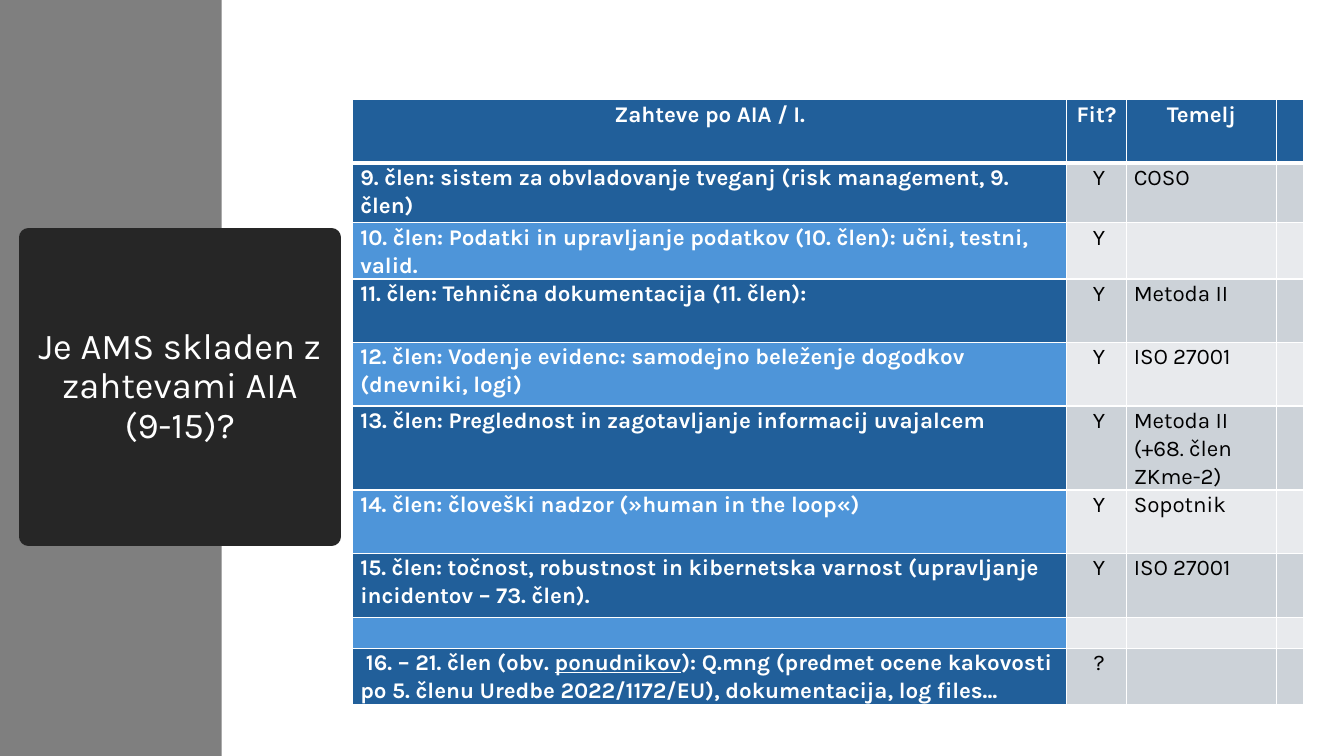
from lxml import etree
from pptx import Presentation
from pptx.dml.color import RGBColor
from pptx.enum.shapes import MSO_SHAPE
from pptx.enum.text import MSO_ANCHOR, MSO_AUTO_SIZE, PP_ALIGN
from pptx.oxml.ns import qn
from pptx.util import Pt

RECTANGLE = MSO_SHAPE.RECTANGLE
CENTER, LEFT = PP_ALIGN.CENTER, PP_ALIGN.LEFT
MIDDLE = MSO_ANCHOR.MIDDLE
NO_AUTOFIT = MSO_AUTO_SIZE.NONE

FONT = "Karla"
TITLE_ONLY = 5
WHITE, BLACK, GREY, CHARCOAL = "FFFFFF", "000000", "7F7F7F", "262626"
ARTICLE_FILLS = ("215F9A", "4E95D9")
ANSWER_FILLS = ("CCD2D8", "E8EAED")

UNDERLINED = "ponudnikov"
HEADINGS = ("Zahteve po AIA / I.", "Fit?", "Temelj", "")
COLUMN_WIDTHS = (510, 42.5, 107.3, 19.4)
HEADER_HEIGHT = 45.4
# Row height, requirement, fit, basis
REQUIREMENTS = (
    (42.5, "9. člen: sistem za obvladovanje tveganj (risk management, 9. člen)", " Y", "COSO"),
    (40, "10. člen: Podatki in upravljanje podatkov (10. člen): učni, testni, valid.", " Y", ""),
    (45.4, "11. člen: Tehnična dokumentacija (11. člen):", " Y", "Metoda II"),
    (45.4, "12. člen: Vodenje evidenc: samodejno beleženje dogodkov (dnevniki, logi)",
     " Y", "ISO 27001"),
    (60, "13. člen: Preglednost in zagotavljanje informacij uvajalcem",
     " Y", "Metoda II (+68. člen ZKme-2)"),
    (45.4, "14. člen: človeški nadzor (»human in the loop«)", " Y", "Sopotnik"),
    (45.4, "15. člen: točnost, robustnost in kibernetska varnost (upravljanje incidentov – 73. člen).",
     " Y", "ISO 27001"),
    (22.3, "", "", ""),
    (40, " 16. – 21. člen (obv. ponudnikov): Q.mng (predmet ocene kakovosti po 5. členu "
     "Uredbe 2022/1172/EU), dokumentacija, log files…", " ?", ""),
)


def paint(color_format, hex_color):
    color_format.rgb = RGBColor.from_string(hex_color)


def fill_with(part, hex_color):
    part.fill.solid()
    paint(part.fill.fore_color, hex_color)


def format_run(run, size, color, bold=False):
    run.font.name = FONT
    run.font.size = Pt(size)
    run.font.bold = bold
    paint(run.font.color, color)


def add_side_band(slide, left, top, width, height):
    band = slide.shapes.add_shape(RECTANGLE, Pt(left), Pt(top), Pt(width), Pt(height))
    band.shadow.inherit = False
    fill_with(band, GREY)
    band.line.fill.background()
    # The band lies behind the title
    band._element.getparent().insert(2, band._element)


def place_title(slide, left, top, width, height):
    title = slide.shapes.title
    title.left, title.top, title.width, title.height = Pt(left), Pt(top), Pt(width), Pt(height)
    fill_with(title, CHARCOAL)
    paint(title.line.color, CHARCOAL)
    title.line.width = Pt(13.75)
    frame = title.text_frame
    frame.text = "Je AMS skladen z zahtevami AIA (9-15)?"
    frame.word_wrap = True
    frame.auto_size = NO_AUTOFIT
    frame.vertical_anchor = MIDDLE
    frame.margin_left = frame.margin_right = Pt(5)
    paragraph = frame.paragraphs[0]
    paragraph.alignment = CENTER
    paragraph.line_spacing = 0.9
    format_run(paragraph.runs[0], 26, WHITE)


def add_borders(cell, bottom_width):
    properties = cell._tc.get_or_add_tcPr()
    widths = {"a:lnL": 1, "a:lnR": 1, "a:lnT": 1, "a:lnB": bottom_width}
    for position, (side, width) in enumerate(widths.items()):
        border = etree.Element(qn(side), w=str(Pt(width)))
        solid = etree.SubElement(border, qn("a:solidFill"))
        etree.SubElement(solid, qn("a:srgbClr"), val=WHITE)
        properties.insert(position, border)


def fill_cell(cell, text, fill, color, bold, alignment, bottom_width=1):
    fill_with(cell, fill)
    add_borders(cell, bottom_width)
    cell.margin_left = cell.margin_right = Pt(5.4)
    cell.margin_top = cell.margin_bottom = Pt(0)
    if not text:
        return
    paragraph = cell.text_frame.paragraphs[0]
    before, underlined, after = text.partition(UNDERLINED)
    paragraph.text = before
    for extra in filter(None, (underlined, after)):
        paragraph.add_run().text = extra
    paragraph.alignment = alignment
    paragraph.line_spacing = 1.07
    paragraph.space_after = Pt(8)
    for run in paragraph.runs:
        format_run(run, 16, color, bold)
        if run.text == UNDERLINED:
            run.font.underline = True


def add_requirements_table(slide, left, top):
    heights = [HEADER_HEIGHT] + [row[0] for row in REQUIREMENTS]
    table = slide.shapes.add_table(
        len(heights), len(COLUMN_WIDTHS), Pt(left), Pt(top),
        Pt(sum(COLUMN_WIDTHS)), Pt(sum(heights))).table
    for column, width in zip(table.columns, COLUMN_WIDTHS):
        column.width = Pt(width)
    for row, height in zip(table.rows, heights):
        row.height = Pt(height)

    # Header
    for index, heading in enumerate(HEADINGS):
        fill_cell(table.cell(0, index), heading, ARTICLE_FILLS[0], WHITE, True, CENTER, 3)

    # Requirements, in alternating bands
    for index, (_, article, fit, basis) in enumerate(REQUIREMENTS):
        article_fill, answer_fill = ARTICLE_FILLS[index % 2], ANSWER_FILLS[index % 2]
        cells = table.rows[index + 1].cells
        fill_cell(cells[0], article, article_fill, WHITE, True, LEFT)
        fill_cell(cells[1], fit, answer_fill, BLACK, False, CENTER)
        fill_cell(cells[2], basis, answer_fill, BLACK, False, LEFT)
        fill_cell(cells[3], "", answer_fill, BLACK, False, LEFT)


def main():
    presentation = Presentation()
    presentation.slide_width, presentation.slide_height = Pt(960), Pt(540)
    slide = presentation.slides.add_slide(presentation.slide_layouts[TITLE_ONLY])
    add_side_band(slide, 0, 0, 158.4, 540)
    place_title(slide, 20.2, 169.9, 216.7, 213.1)
    add_requirements_table(slide, 252, 71.3)
    presentation.save("out.pptx")


if __name__ == "__main__":
    main()
